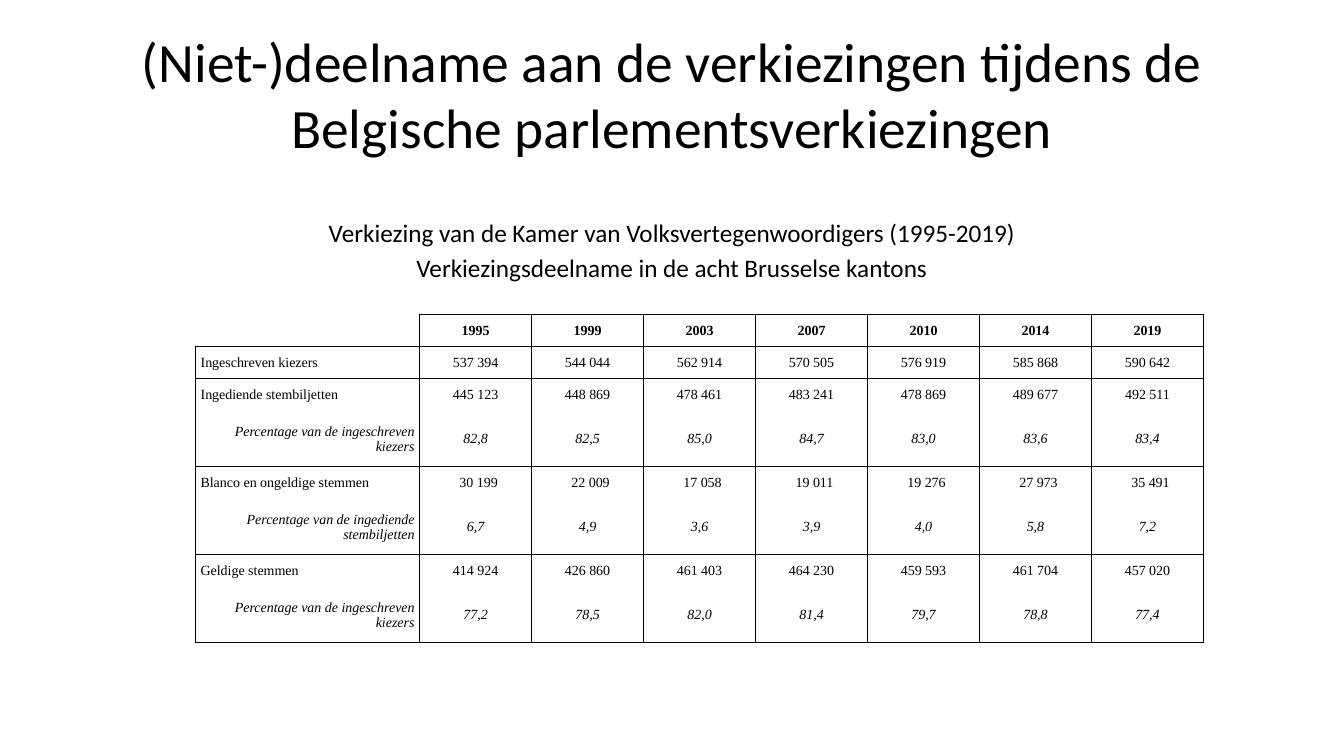
from lxml.etree import SubElement
from pptx import Presentation
from pptx.dml.color import RGBColor
from pptx.enum.text import MSO_ANCHOR, MSO_AUTO_SIZE, PP_ALIGN
from pptx.oxml.ns import qn
from pptx.util import Pt

COLOURS = {"ink": "000000"}
SIDES = "LRTB"
YEARS = ["1995", "1999", "2003", "2007", "2010", "2014", "2019"]
REGISTERED = [537394, 544044, 562914, 570505, 576919, 585868, 590642]
RESULTS = [
    ("Ingediende stembiljetten",
     [445123, 448869, 478461, 483241, 478869, 489677, 492511],
     "Percentage van de ingeschreven kiezers",
     [82.8, 82.5, 85.0, 84.7, 83.0, 83.6, 83.4]),
    ("Blanco en ongeldige stemmen",
     [30199, 22009, 17058, 19011, 19276, 27973, 35491],
     "Percentage van de ingediende stembiljetten",
     [6.7, 4.9, 3.6, 3.9, 4.0, 5.8, 7.2]),
    ("Geldige stemmen",
     [414924, 426860, 461403, 464230, 459593, 461704, 457020],
     "Percentage van de ingeschreven kiezers",
     [77.2, 78.5, 82.0, 81.4, 79.7, 78.8, 77.4]),
]


def counts(numbers):
    return [f"{number:,}".replace(",", " ") for number in numbers]


def shares(numbers):
    return [f"{number:.1f}".replace(".", ",") for number in numbers]


def style(target, values):
    for name, value in values.items():
        setattr(target, name, value)


class SlideBuilder:
    title_font = {"name": "Calibri", "size": Pt(39.6), "bold": False}
    subtitle_font = {"name": "Calibri", "size": Pt(18)}
    cell_font = {"name": "Times New Roman", "size": Pt(10)}
    cell_format = {
        "vertical_anchor": MSO_ANCHOR.MIDDLE,
        "margin_left": Pt(3.6), "margin_right": Pt(3.6),
        "margin_top": Pt(0.7), "margin_bottom": Pt(0),
    }
    cell_spacing = {"space_before": Pt(1), "space_after": Pt(1)}

    def __init__(self, page):
        self.page = page

    def text(self, para, words, font, align):
        para.alignment = align
        span = para.add_run()
        span.text = words
        style(span.font, font)
        span.font.color.rgb = RGBColor.from_string(COLOURS["ink"])

    def title(self, words, left, top, width, height):
        box = self.page.shapes.title
        style(box, {"left": Pt(left), "top": Pt(top),
                    "width": Pt(width), "height": Pt(height)})
        style(box.text_frame, {"word_wrap": True, "auto_size": MSO_AUTO_SIZE.NONE,
                               "vertical_anchor": MSO_ANCHOR.MIDDLE})
        self.text(box.text_frame.paragraphs[0], words, self.title_font, PP_ALIGN.CENTER)

    def subtitle(self, lines, left, top, width, height):
        box = self.page.shapes.add_textbox(Pt(left), Pt(top), Pt(width), Pt(height))
        frame = box.text_frame
        style(frame, {"word_wrap": True, "margin_top": Pt(29.2)})
        for index, line in enumerate(lines):
            para = frame.add_paragraph() if index else frame.paragraphs[0]
            if index:
                para.space_before = Pt(3.6)
            self.text(para, line, self.subtitle_font, PP_ALIGN.CENTER)

    def borders(self, cell, drawn):
        properties = cell._tc.get_or_add_tcPr()
        for side in SIDES:
            line = SubElement(properties, qn(f"a:ln{side}"), w=str(Pt(1)))
            if side in drawn:
                fill = SubElement(line, qn("a:solidFill"))
                SubElement(fill, qn("a:srgbClr"), val=COLOURS["ink"])
            else:
                SubElement(line, qn("a:noFill"))

    def cell(self, cell, words, align, drawn, indent, emphasis):
        style(cell, self.cell_format)
        cell.margin_left += Pt(indent)
        self.borders(cell, drawn)
        cell.fill.background()
        para = cell.text_frame.paragraphs[0]
        style(para, self.cell_spacing)
        if words:
            self.text(para, words, {**self.cell_font, **emphasis}, align)
        else:
            SubElement(para._p, qn("a:endParaRPr"), sz="1000")

    def table(self, rows, left, top, widths, heights):
        frame = self.page.shapes.add_table(
            len(heights), len(widths), Pt(left), Pt(top), Pt(sum(widths)), Pt(sum(heights)))
        table = frame.table
        style(table, {"first_row": False, "horz_banding": False})
        for column, width in zip(table.columns, widths):
            column.width = Pt(width)
        for row, height in zip(table.rows, heights):
            row.height = Pt(height)
        for r, (label, values, drawn, align, indent, emphasis) in enumerate(rows):
            self.cell(table.cell(r, 0), label, align, drawn if label else "RB", 0, emphasis)
            for c, value in enumerate(values, 1):
                self.cell(table.cell(r, c), value, PP_ALIGN.CENTER, drawn, indent, emphasis)


def main():
    deck = Presentation()
    deck.slide_width, deck.slide_height = Pt(960), Pt(540)
    builder = SlideBuilder(deck.slides.add_slide(deck.slide_layouts[5]))

    builder.title("(Niet-)deelname aan de verkiezingen tijdens de Belgische parlementsverkiezingen",
                  48, 21.6, 864, 90)
    builder.subtitle(["Verkiezing van de Kamer van Volksvertegenwoordigers (1995-2019)",
                      "Verkiezingsdeelname in de acht Brusselse kantons"],
                     48, 126, 864, 356.4)

    plain = {"bold": False, "italic": False}
    rows = [("", YEARS, SIDES, PP_ALIGN.LEFT, 0, {"bold": True}),
            ("Ingeschreven kiezers", counts(REGISTERED), SIDES, PP_ALIGN.LEFT, 0, plain)]
    for label, numbers, share_label, percentages in RESULTS:
        indent = 4.3 if max(numbers) < 100000 else 0
        rows.append((label, counts(numbers), "LRT", PP_ALIGN.LEFT, indent, plain))
        rows.append((share_label, shares(percentages), "LRB", PP_ALIGN.RIGHT, 0,
                     {"bold": False, "italic": True}))
    builder.table(rows, 139.7, 224.7, [160] + [80] * len(YEARS),
                  [22.9] * 2 + [22.9, 40] * len(RESULTS))
    deck.save("out.pptx")


if __name__ == "__main__":
    main()
